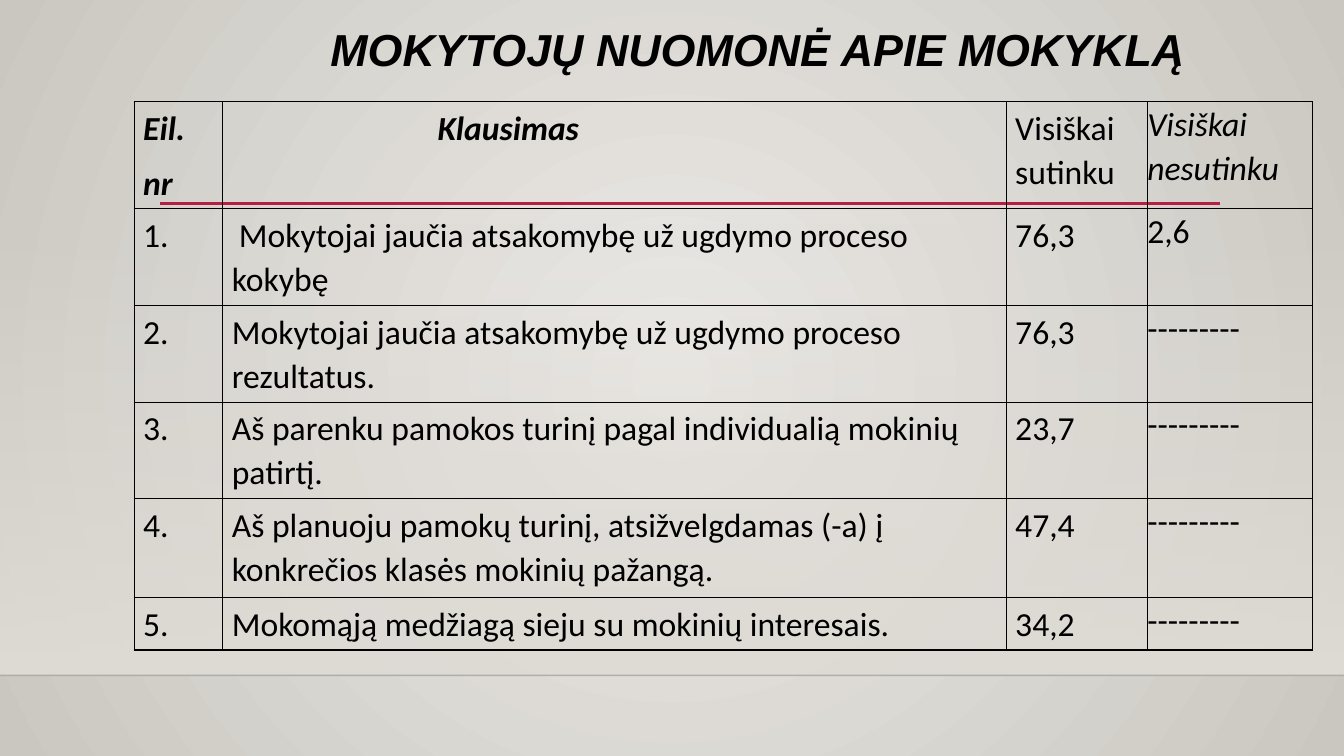
from lxml.etree import SubElement
from pptx import Presentation
from pptx.dml.color import RGBColor
from pptx.enum.shapes import MSO_CONNECTOR, MSO_SHAPE
from pptx.enum.text import MSO_ANCHOR, PP_ALIGN
from pptx.oxml import parse_xml
from pptx.oxml.ns import nsdecls, qn
from pptx.util import Inches, Pt

BLACK = RGBColor(0x00, 0x00, 0x00)
RULE = RGBColor(0x00, 0x00, 0x01)
CRIMSON = RGBColor(0xB7, 0x1E, 0x42)
LIGHT = RGBColor(0xEC, 0xEA, 0xE7)
SHADE = RGBColor(0xCA, 0xC7, 0xC1)
SAND = RGBColor(0xDF, 0xDB, 0xD5)

COLS = (6.6, 58.29, 10.5, 12.3)
ROWS = (14.13, 12.8, 12.8, 12.8, 13.07, 6.93)
DASHES = "---------"
HEADER = ("Eil.\nnr", "Klausimas", "Visiškai sutinku", "Visiškai nesutinku")
ANSWERS = (
    ("Mokytojai jaučia atsakomybę už ugdymo proceso kokybę", "76,3", "2,6"),
    ("Mokytojai jaučia atsakomybę už ugdymo proceso rezultatus.", "76,3", DASHES),
    ("Aš parenku pamokos turinį pagal individualią mokinių patirtį.", "23,7", DASHES),
    ("Aš planuoju pamokų turinį, atsižvelgdamas (-a) į konkrečios klasės mokinių pažangą.",
     "47,4", DASHES),
    ("Mokomąją medžiagą sieju su mokinių interesais.", "34,2", DASHES),
)
INDENTS = {(0, 1): ("marL", Inches(2.04)), (1, 1): ("indent", Inches(0.07))}


class SlideBuilder:
    """Draws styled elements on one slide, with lengths in percent of its size."""

    def __init__(self, prs):
        self.width, self.height = prs.slide_width, prs.slide_height
        self.slide = prs.slides.add_slide(prs.slide_layouts[6])
        self.shapes = self.slide.shapes

    def x(self, share):
        return round(self.width * share / 100)

    def y(self, share):
        return round(self.height * share / 100)

    def box(self, left, top, width, height):
        return self.x(left), self.y(top), self.x(width), self.y(height)

    def gradient(self, fill, *colors):
        fill.gradient()
        for stop, color in zip(fill.gradient_stops, colors):
            stop.color.rgb = color

    def alpha(self, element, percent):
        clr = next(element.iter(qn("a:srgbClr")))
        SubElement(clr, qn("a:alpha")).set("val", str(percent * 1000))

    def background(self, center, edge):
        self.gradient(self.slide.background.fill, center, edge)
        lin = next(self.slide.element.iter(qn("a:lin")))
        lin.getparent().replace(lin, parse_xml(
            f'<a:path {nsdecls("a")} path="circle">'
            '<a:fillToRect l="50000" t="50000" r="50000" b="50000"/></a:path>'))

    def fading_band(self, place, color):
        sp = self.shapes.add_shape(MSO_SHAPE.RECTANGLE, *self.box(*place))
        sp.shadow.inherit = False
        sp.line.fill.background()
        self.gradient(sp.fill, color, color)
        sp.fill.gradient_angle = 270
        self.alpha(sp.element.spPr, 0)

    def rule(self, left, right, top, color, width, opacity=100):
        line = self.shapes.add_connector(
            MSO_CONNECTOR.STRAIGHT, self.x(left), self.y(top), self.x(right), self.y(top))
        line.line.color.rgb = color
        line.line.width = Pt(width)
        spPr = line.element.spPr
        if opacity < 100:
            self.alpha(spPr, opacity)
        SubElement(spPr, qn("a:effectLst"))

    def run(self, p, text, font, size, bold=False, italic=False):
        r = p.add_run()
        r.text = text
        r.font.name, r.font.size = font, Pt(size)
        r.font.bold, r.font.italic = bold, italic
        r.font.color.rgb = BLACK

    def title(self, place, text):
        tf = self.shapes.add_textbox(*self.box(*place)).text_frame
        tf.word_wrap = True
        tf.vertical_anchor = MSO_ANCHOR.TOP
        tf.margin_left, tf.margin_top = Inches(0.28), Inches(0.28)
        p = tf.paragraphs[0]
        p.alignment = PP_ALIGN.CENTER
        p.line_spacing = 0.9
        self.run(p, text, "Arial", 32, True, True)

    def borders(self, tcPr):
        for i, side in enumerate(("lnL", "lnR", "lnT", "lnB")):
            tcPr.insert(i, parse_xml(
                f'<a:{side} {nsdecls("a")} w="12700"><a:solidFill>'
                f'<a:srgbClr val="{BLACK}"/></a:solidFill></a:{side}>'))

    def cell(self, cell, text, bold, italic, flush, indent):
        cell.fill.background()
        self.borders(cell._tc.get_or_add_tcPr())
        cell.margin_left = cell.margin_right = 0 if flush else Inches(0.09)
        cell.margin_top = cell.margin_bottom = 0 if flush else Inches(0.04)
        tf = cell.text_frame
        for i, line in enumerate(text.split("\n")):
            p = tf.add_paragraph() if i else tf.paragraphs[0]
            p.line_spacing = 1.07
            p.space_after = Pt(8)
            if indent:
                p._p.get_or_add_pPr().set(indent[0], str(indent[1]))
            self.run(p, line, "Calibri", 24, bold, italic)

    def table(self, left, top, cols, rows, data):
        frame = self.shapes.add_table(
            len(rows), len(cols), *self.box(left, top, sum(cols), sum(rows)))
        table = frame.table
        table.first_row = table.horz_banding = False
        for col, width in zip(table.columns, cols):
            col.width = self.x(width)
        for row, height in zip(table.rows, rows):
            row.height = self.y(height)
        for r, texts in enumerate(data):
            for c, text in enumerate(texts):
                self.cell(table.cell(r, c), text, bold=r == 0 and c < 2,
                          italic=r == 0 and c != 2, flush=c == 3,
                          indent=INDENTS.get((r, c)))


def main():
    prs = Presentation()
    prs.slide_width, prs.slide_height = Inches(13.33), Inches(7.5)
    s = SlideBuilder(prs)
    s.background(LIGHT, SHADE)
    s.fading_band((0, 29.47, 100, 59.87), SAND)
    s.rule(0, 100, 89.33, RULE, 1, opacity=20)
    s.rule(11.93, 90.77, 26.93, CRIMSON, 2.5)
    s.title((12.08, 0, 87.25, 19.2), "MOKYTOJŲ NUOMONĖ APIE MOKYKLĄ")
    numbered = [(f"{n}.", *answer) for n, answer in enumerate(ANSWERS, 1)]
    s.table(9.98, 13.47, COLS, ROWS, [HEADER, *numbered])
    prs.save("out.pptx")


if __name__ == "__main__":
    main()
